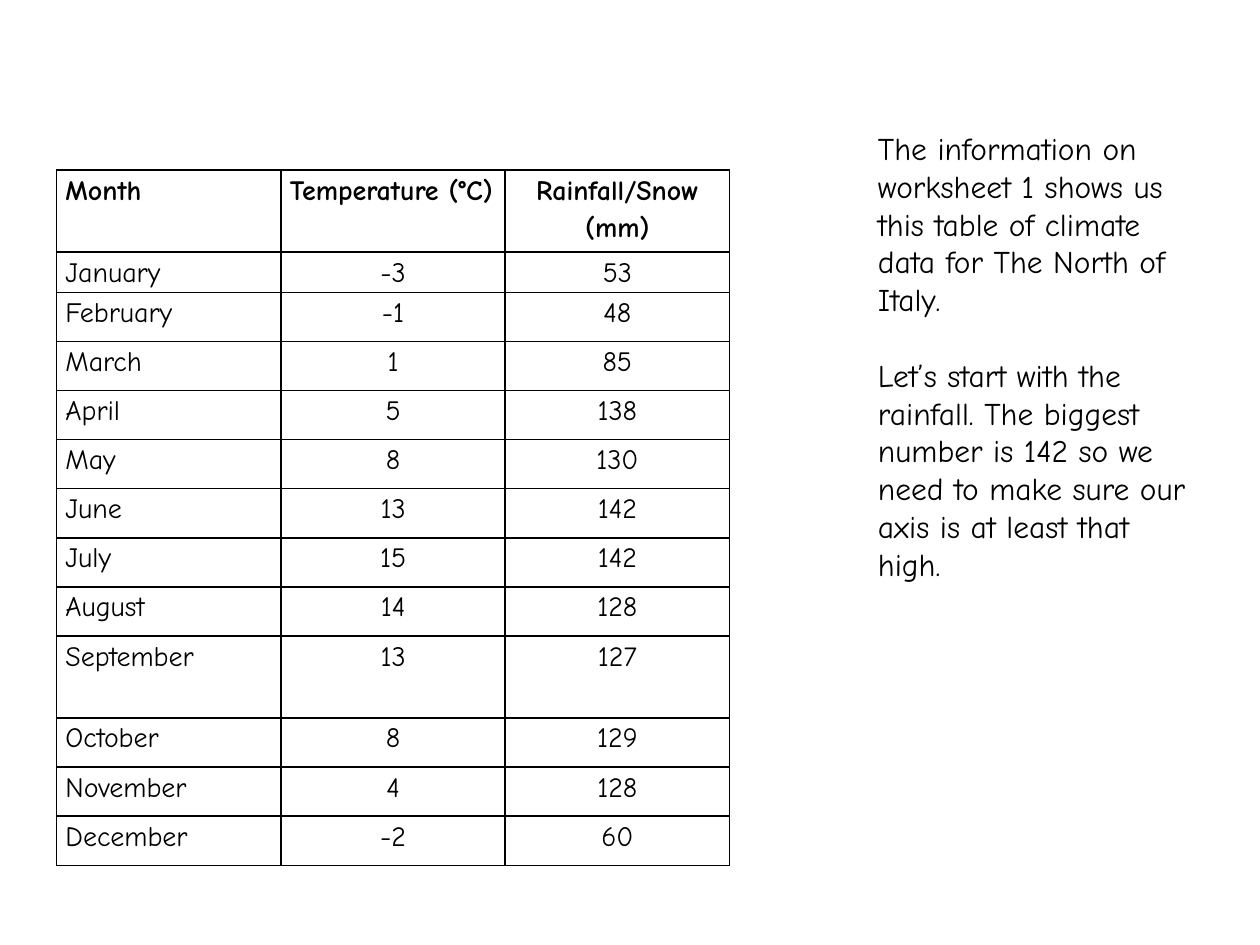
from dataclasses import dataclass

from lxml.etree import SubElement
from pptx import Presentation
from pptx.dml.color import RGBColor
from pptx.enum.text import MSO_AUTO_SIZE, PP_ALIGN
from pptx.oxml.ns import qn
from pptx.util import Inches, Pt

COLORS = {"ink": "000000"}
FONT = "Comic Neue"
WIDTH, HEIGHT = Inches(10), Inches(7.5)
COLUMN_WIDTH = Inches(1.78)
ROW_HEIGHT = Inches(0.39)
SPECIAL_HEIGHTS = {"Month": Inches(0.65), "January": Inches(0.32), "September": Inches(0.65)}


@dataclass
class Climate:
    month: str
    temperature: str
    rainfall: str


@dataclass
class Box:
    left: float
    top: float
    width: float
    height: float

    def place(self) -> tuple[int, int, int, int]:
        return (int(self.left * WIDTH), int(self.top * HEIGHT),
                int(self.width * WIDTH), int(self.height * HEIGHT))


ROWS = [
    Climate("Month", "Temperature (°C)", "Rainfall/Snow (mm)"),
    Climate("January", "-3", "53"),
    Climate("February", "-1", "48"),
    Climate("March", "1", "85"),
    Climate("April", "5", "138"),
    Climate("May", "8", "130"),
    Climate("June", "13", "142"),
    Climate("July", "15", "142"),
    Climate("August", "14", "128"),
    Climate("September", "13", "127"),
    Climate("October", "8", "129"),
    Climate("November", "4", "128"),
    Climate("December", "-2", "60"),
]
NOTES = [
    "The information on worksheet 1 shows us this table of climate data for The North of Italy.",
    "Let’s start with the rainfall. The biggest number is 142 so we need to make sure our "
    "axis is at least that high.",
]


def write(p, text: str, size: int, bold: bool = False) -> None:
    p.text = text
    for r in p.runs:
        r.font.name = FONT
        r.font.size = Pt(size)
        r.font.bold = bold
        r.font.color.rgb = RGBColor.from_string(COLORS["ink"])


def add_borders(cell) -> None:
    props = cell._tc.get_or_add_tcPr()
    for i, side in enumerate(("lnL", "lnR", "lnT", "lnB")):
        line = props.makeelement(qn(f"a:{side}"), {"w": str(Pt(1))})
        fill = SubElement(line, qn("a:solidFill"))
        SubElement(fill, qn("a:srgbClr"), val=COLORS["ink"])
        props.insert(i, line)


def fill_cell(cell, text: str, header: bool, centered: bool) -> None:
    cell.fill.background()
    cell.margin_left = cell.margin_right = Inches(0.07)
    cell.margin_top = cell.margin_bottom = 0
    p = cell.text_frame.paragraphs[0]
    p.alignment = PP_ALIGN.CENTER if centered else PP_ALIGN.LEFT
    p.line_spacing = 1.15
    p.space_after = Pt(10)
    write(p, text, 16, header)
    add_borders(cell)


def add_climate_table(s, box: Box) -> None:
    table = s.shapes.add_table(len(ROWS), 3, *box.place()).table
    table.horz_banding = False
    for column in table.columns:
        column.width = COLUMN_WIDTH
    for i, row in enumerate(ROWS):
        table.rows[i].height = SPECIAL_HEIGHTS.get(row.month, ROW_HEIGHT)
        for j, text in enumerate((row.month, row.temperature, row.rainfall)):
            header = i == 0
            centered = j == 2 or (j == 1 and not header)
            fill_cell(table.cell(i, j), text, header, centered)


def add_notes(s, box: Box) -> None:
    tf = s.shapes.add_textbox(*box.place()).text_frame
    tf.word_wrap = True
    tf.auto_size = MSO_AUTO_SIZE.SHAPE_TO_FIT_TEXT
    for i, text in enumerate(NOTES):
        p = tf.add_paragraph() if i else tf.paragraphs[0]
        write(p, text, 18)
    tf.paragraphs[0].space_after = Pt(21.6)


def main() -> None:
    prs = Presentation()
    prs.slide_width, prs.slide_height = WIDTH, HEIGHT
    s = prs.slides.add_slide(prs.slide_layouts[6])
    add_climate_table(s, Box(0.045, 0.18, 0.53, 0.73))
    add_notes(s, Box(0.687, 0.13, 0.27, 0.5))
    prs.save("out.pptx")


if __name__ == "__main__":
    main()
